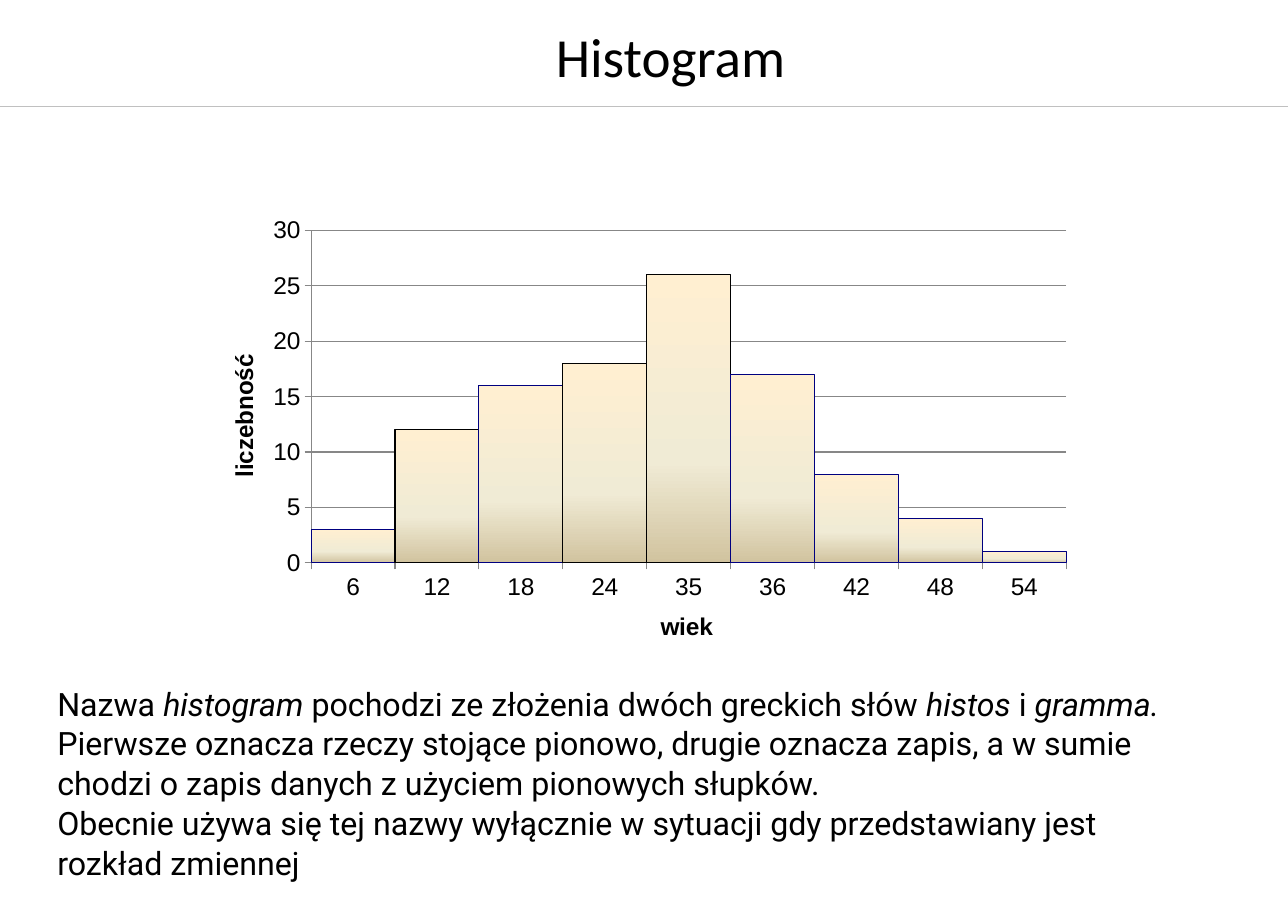
import copy
from dataclasses import dataclass

import lxml.etree
import pptx
import pptx.chart.data
import pptx.dml.color
import pptx.enum.chart
import pptx.enum.shapes
import pptx.enum.text
import pptx.oxml
import pptx.oxml.ns
import pptx.util

Pt = pptx.util.Pt
qn = pptx.oxml.ns.qn

TITLE = "Histogram"
COUNTS = {"6": 3, "12": 12, "18": 16, "24": 18, "35": 26, "36": 17, "42": 8, "48": 4, "54": 1}
DARK_OUTLINED = ("12", "24", "35")
AXIS_TITLES = {"category": ("wiek", 0.52, 0.93), "value": ("liczebność", 0.03, 0.41)}
PLOT_AREA = {"x": 0.129, "y": 0.164, "w": 0.856, "h": 0.677}
EXPLANATION = [
    [
        ("Nazwa ", False),
        ("histogram", True),
        (" pochodzi ze złożenia dwóch greckich słów ", False),
        ("histos", True),
        (" i ", False),
        ("gramma. ", True),
        ("Pierwsze oznacza rzeczy stojące pionowo, drugie oznacza zapis, a w sumie "
         "chodzi o zapis danych z użyciem pionowych słupków.", False),
    ],
    [("Obecnie używa się tej nazwy wyłącznie w sytuacji gdy przedstawiany jest "
      "rozkład zmiennej", False)],
]


@dataclass(frozen=True)
class Theme:
    text: str = "000000"
    rule: str = "C0C0C0"
    axis: str = "878787"
    outline: str = "000080"
    dark_outline: str = "000000"
    bar_stops: tuple = ((0, "FFEFD1"), (0.65, "F0EBD5"), (1, "D1C39F"))
    title_font: str = "Calibri"
    body_font: str = "Roboto"
    chart_font: str = "Arial"
    title_size: int = 36
    body_size: int = 21
    chart_size: int = 16


THEME = Theme()
WIDTH, HEIGHT = 841, 594.7
RULE_TOP = 69.1
TITLE_BOX = (63.4, 13.7, 748.8, 45.4)
CHART_BOX = (128.9, 97.9, 576, 324.7)
EXPLANATION_BOX = (29.5, 441.4, 741.6, 135.4)


def points(box):
    return [Pt(length) for length in box]


def rgb(value):
    return pptx.dml.color.RGBColor.from_string(value)


def set_font(font, name, size, bold=False):
    font.name = name
    font.size = Pt(size)
    font.bold = bold
    font.color.rgb = rgb(THEME.text)


def set_line(line, color, width):
    line.color.rgb = rgb(color)
    line.width = Pt(width)


def set_margins(frame, side, edge):
    frame.margin_left = frame.margin_right = Pt(side)
    frame.margin_top = frame.margin_bottom = Pt(edge)
    frame.word_wrap = True


def manual_layout(inner=False, **fractions):
    layout = pptx.oxml.parse_xml(f'<c:layout {pptx.oxml.ns.nsdecls("c")}><c:manualLayout/></c:layout>')
    settings = [("layoutTarget", "inner")] if inner else []
    settings += [("xMode", "edge"), ("yMode", "edge"), *fractions.items()]
    for name, value in settings:
        lxml.etree.SubElement(layout[0], qn(f"c:{name}")).set("val", str(value))
    return layout


def fill_bar(fill):
    fill.gradient()
    fill.gradient_angle = 270
    stop_list = fill._xPr.find(".//" + qn("a:gsLst"))
    stop_list.append(copy.deepcopy(stop_list[0]))
    for stop, (position, color) in zip(fill.gradient_stops, THEME.bar_stops):
        stop.position = position
        stop.color.rgb = rgb(color)


def format_axis(axis, text, x, y):
    axis.major_tick_mark = pptx.enum.chart.XL_TICK_MARK.OUTSIDE
    axis.minor_tick_mark = pptx.enum.chart.XL_TICK_MARK.NONE
    set_line(axis.format.line, THEME.axis, 0.75)
    set_font(axis.tick_labels.font, THEME.chart_font, THEME.chart_size)
    title = axis.axis_title
    paragraph = title.text_frame.paragraphs[0]
    paragraph.text = text
    set_font(paragraph.font, THEME.chart_font, THEME.chart_size, bold=True)
    for layout in title._element.findall(qn("c:layout")):
        title._element.remove(layout)
    title._element.find(qn("c:tx")).addnext(manual_layout(x=x, y=y))


def add_title(slide):
    title = slide.shapes.title
    title.left, title.top, title.width, title.height = points(TITLE_BOX)
    frame = title.text_frame
    set_margins(frame, 4.3, 4.3)
    frame.vertical_anchor = pptx.enum.text.MSO_ANCHOR.MIDDLE
    paragraph = frame.paragraphs[0]
    paragraph.text = TITLE
    paragraph.alignment = pptx.enum.text.PP_ALIGN.CENTER
    set_font(paragraph.font, THEME.title_font, THEME.title_size)


def add_rule(slide):
    rule = slide.shapes.add_connector(
        pptx.enum.shapes.MSO_CONNECTOR.STRAIGHT, *points((0, RULE_TOP, WIDTH, RULE_TOP)))
    set_line(rule.line, THEME.rule, 0.25)
    lxml.etree.SubElement(rule._element.spPr, qn("a:effectLst"))


def add_histogram(slide):
    data = pptx.chart.data.CategoryChartData()
    data.categories = list(COUNTS)
    data.add_series("Series 1", COUNTS.values())
    chart = slide.shapes.add_chart(
        pptx.enum.chart.XL_CHART_TYPE.COLUMN_CLUSTERED, *points(CHART_BOX), data).chart
    chart.has_legend = False
    chart.has_title = False
    set_font(chart.font, THEME.chart_font, THEME.chart_size)

    format_axis(chart.category_axis, *AXIS_TITLES["category"])
    value_axis = chart.value_axis
    format_axis(value_axis, *AXIS_TITLES["value"])
    value_axis.minimum_scale, value_axis.maximum_scale, value_axis.major_unit = 0, 30, 5
    value_axis.has_major_gridlines = True
    set_line(value_axis.major_gridlines.format.line, THEME.axis, 0.75)

    plot = chart.plots[0]
    plot.gap_width = 0
    plot.vary_by_categories = False
    series = plot.series[0]
    fill_bar(series.format.fill)
    set_line(series.format.line, THEME.outline, 0.75)
    for index, age in enumerate(COUNTS):
        if age in DARK_OUTLINED:
            bar = series.points[index].format
            fill_bar(bar.fill)
            set_line(bar.line, THEME.dark_outline, 0.75)

    plot_area = chart._chartSpace.chart.plotArea
    for layout in plot_area.findall(qn("c:layout")):
        plot_area.remove(layout)
    plot_area.insert(0, manual_layout(inner=True, **PLOT_AREA))


def add_explanation(slide):
    frame = slide.shapes.add_textbox(*points(EXPLANATION_BOX)).text_frame
    set_margins(frame, 7.9, 4.3)
    for index, runs in enumerate(EXPLANATION):
        paragraph = frame.add_paragraph() if index else frame.paragraphs[0]
        paragraph.line_spacing = 1.03
        set_font(paragraph.font, THEME.body_font, THEME.body_size)
        for text, italic in runs:
            run = paragraph.add_run()
            run.text = text
            run.font.italic = italic


def main():
    presentation = pptx.Presentation()
    presentation.slide_width, presentation.slide_height = points((WIDTH, HEIGHT))
    slide = presentation.slides.add_slide(presentation.slide_layouts.get_by_name("Title Only"))
    add_rule(slide)
    add_title(slide)
    add_histogram(slide)
    add_explanation(slide)
    presentation.save("out.pptx")


if __name__ == "__main__":
    main()
